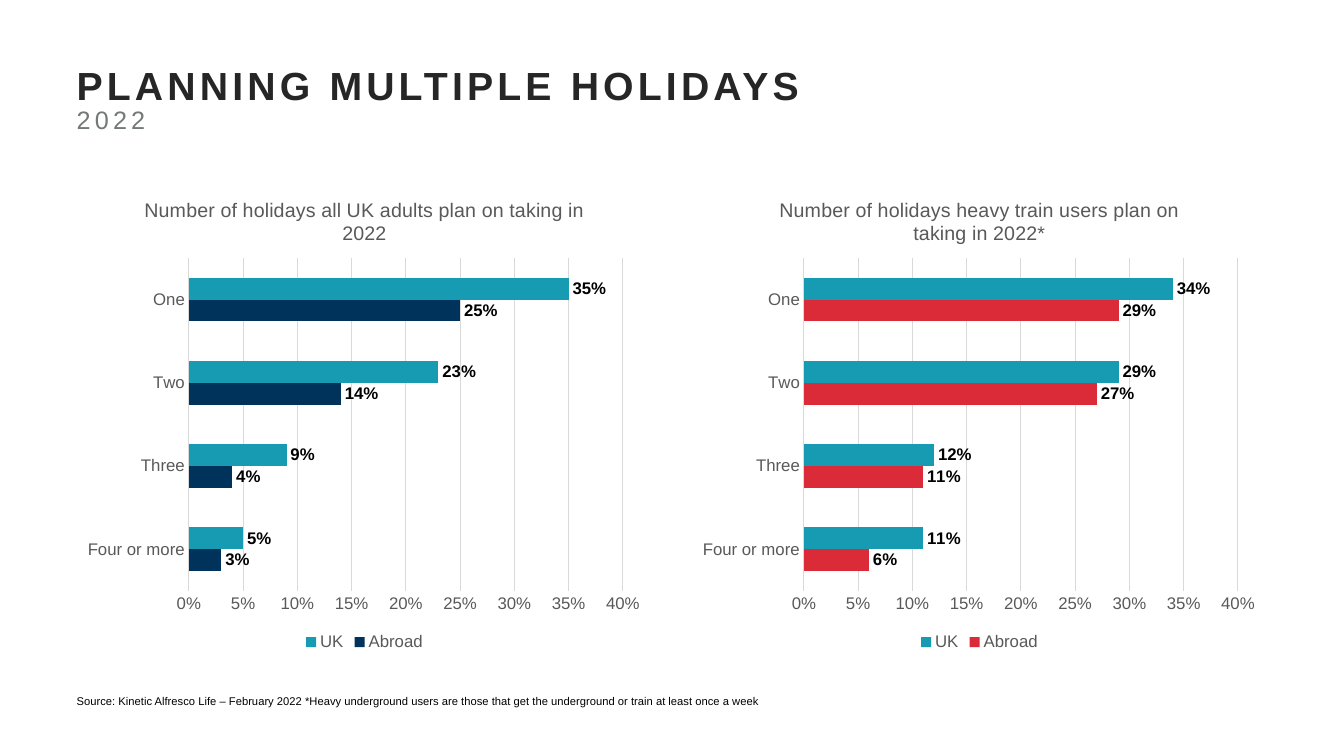
from dataclasses import dataclass

from lxml import etree
from pptx import Presentation
from pptx.chart.data import CategoryChartData
from pptx.dml.color import RGBColor
from pptx.enum.chart import XL_CHART_TYPE, XL_LABEL_POSITION, XL_LEGEND_POSITION, XL_TICK_MARK
from pptx.oxml.ns import qn
from pptx.util import Inches, Pt

BAR_CLUSTERED = XL_CHART_TYPE.BAR_CLUSTERED
OUTSIDE_END = XL_LABEL_POSITION.OUTSIDE_END
LEGEND_BOTTOM = XL_LEGEND_POSITION.BOTTOM
NO_TICK = XL_TICK_MARK.NONE

BLACK = RGBColor(0x00, 0x00, 0x00)
HEADING = RGBColor(0x26, 0x26, 0x26)
SUBHEADING = RGBColor(0x73, 0x79, 0x76)
CHART_TEXT = RGBColor(0x59, 0x59, 0x59)
GRID = RGBColor(0xD9, 0xD9, 0xD9)
TEAL = RGBColor(0x16, 0x9B, 0xB2)
NAVY = RGBColor(0x00, 0x33, 0x5B)
RED = RGBColor(0xDB, 0x2B, 0x38)

FONT = "Arial"
MARGIN = 0.76
TEXT_WIDTH = 11.81
HOLIDAYS = ("Four or more", "Three", "Two", "One")
PLOT_AREA = {"x": 0.195, "y": 0.165, "w": 0.754, "h": 0.7}


@dataclass
class HolidayChart:
    left: float
    title: str
    abroad: tuple[float, ...]
    uk: tuple[float, ...]
    abroad_color: RGBColor


@dataclass
class TextRun:
    text: str
    size: float
    color: RGBColor
    bold: bool = False
    spacing: float = 0


CHARTS = (
    HolidayChart(MARGIN, "Number of holidays all UK adults plan on taking in 2022",
                 (0.03, 0.04, 0.14, 0.25), (0.05, 0.09, 0.23, 0.35), NAVY),
    HolidayChart(6.86, "Number of holidays heavy train users plan on taking in 2022*",
                 (0.06, 0.11, 0.27, 0.29), (0.11, 0.12, 0.29, 0.34), RED),
)


def style_font(font, size: float, color: RGBColor, bold: bool = False) -> None:
    font.name = FONT
    font.size = Pt(size)
    font.bold = bold
    font.color.rgb = color


def add_text(slide, top: float, height: float, line_spacing: float, lines: list[TextRun]) -> None:
    """Add one paragraph across the slide, with a line break between the runs."""
    box = slide.shapes.add_textbox(Inches(MARGIN), Inches(top), Inches(TEXT_WIDTH), Inches(height))
    frame = box.text_frame
    frame.word_wrap = True
    frame.margin_left = frame.margin_top = frame.margin_right = frame.margin_bottom = 0
    paragraph = frame.paragraphs[0]
    paragraph.line_spacing = line_spacing
    for index, line in enumerate(lines):
        if index:
            paragraph.add_line_break()
        run = paragraph.add_run()
        run.text = line.text
        style_font(run.font, line.size, line.color, line.bold)
        if line.spacing:
            run.font._element.set("spc", str(int(line.spacing * 100)))


def fix_plot_area(chart) -> None:
    """Pin the inner plot area to fractions of the chart frame."""
    plot_area = chart._chartSpace.chart.plotArea
    for automatic in plot_area.findall(qn("c:layout")):
        plot_area.remove(automatic)
    layout = etree.Element(qn("c:layout"))
    manual = etree.SubElement(layout, qn("c:manualLayout"))
    etree.SubElement(manual, qn("c:layoutTarget")).set("val", "inner")
    for mode in ("xMode", "yMode"):
        etree.SubElement(manual, qn(f"c:{mode}")).set("val", "edge")
    for side, fraction in PLOT_AREA.items():
        etree.SubElement(manual, qn(f"c:{side}")).set("val", str(fraction))
    plot_area.insert(0, layout)


def style_axes(chart) -> None:
    for axis in (chart.category_axis, chart.value_axis):
        axis.major_tick_mark = axis.minor_tick_mark = NO_TICK
        style_font(axis.tick_labels.font, 12, CHART_TEXT)
    values = chart.value_axis
    values.minimum_scale, values.maximum_scale, values.major_unit = 0, 0.4, 0.05
    values.tick_labels.number_format = "0%"
    values.tick_labels.number_format_is_linked = False
    values.format.line.fill.background()
    values.has_major_gridlines = True
    for line in (chart.category_axis.format.line, values.major_gridlines.format.line):
        line.color.rgb = GRID
        line.width = Pt(0.75)


def add_holiday_chart(slide, holiday: HolidayChart) -> None:
    data = CategoryChartData(number_format="0%")
    data.categories = HOLIDAYS
    data.add_series("Abroad", holiday.abroad)
    data.add_series("UK", holiday.uk)
    chart = slide.shapes.add_chart(BAR_CLUSTERED, Inches(holiday.left), Inches(1.78),
                                   Inches(5.71), Inches(4.72), data).chart
    style_font(chart.font, 10, BLACK)

    chart.has_title = True
    title = chart.chart_title.text_frame.paragraphs[0].add_run()
    title.text = holiday.title
    style_font(title.font, 14, CHART_TEXT)
    chart.chart_title.include_in_layout = False

    chart.has_legend = True
    chart.legend.position = LEGEND_BOTTOM
    chart.legend.include_in_layout = False
    style_font(chart.legend.font, 12, CHART_TEXT)

    style_axes(chart)
    fix_plot_area(chart)

    plot = chart.plots[0]
    plot.gap_width = 182
    plot.overlap = 0
    plot.vary_by_categories = False
    for series, color in zip(plot.series, (holiday.abroad_color, TEAL)):
        series.format.fill.solid()
        series.format.fill.fore_color.rgb = color
        labels = series.data_labels
        labels.show_value = True
        labels.position = OUTSIDE_END
        labels.number_format = "0%"
        labels.number_format_is_linked = False
        style_font(labels.font, 12, BLACK, bold=True)


def main() -> None:
    deck = Presentation()
    deck.slide_width, deck.slide_height = Inches(13.33), Inches(7.5)
    slide = deck.slides.add_slide(deck.slide_layouts[6])
    add_text(slide, 0.68, 1.1, 0.85, [
        TextRun("PLANNING MULTIPLE HOLIDAYS", 28, HEADING, bold=True, spacing=3),
        TextRun("2022", 18, SUBHEADING, spacing=3),
    ])
    for holiday in CHARTS:
        add_holiday_chart(slide, holiday)
    add_text(slide, 6.9, 0.39, 0.9, [
        TextRun("Source: Kinetic Alfresco Life – February 2022 *Heavy underground users are those "
                "that get the underground or train at least once a week", 8, BLACK),
    ])
    deck.save("out.pptx")


if __name__ == "__main__":
    main()
